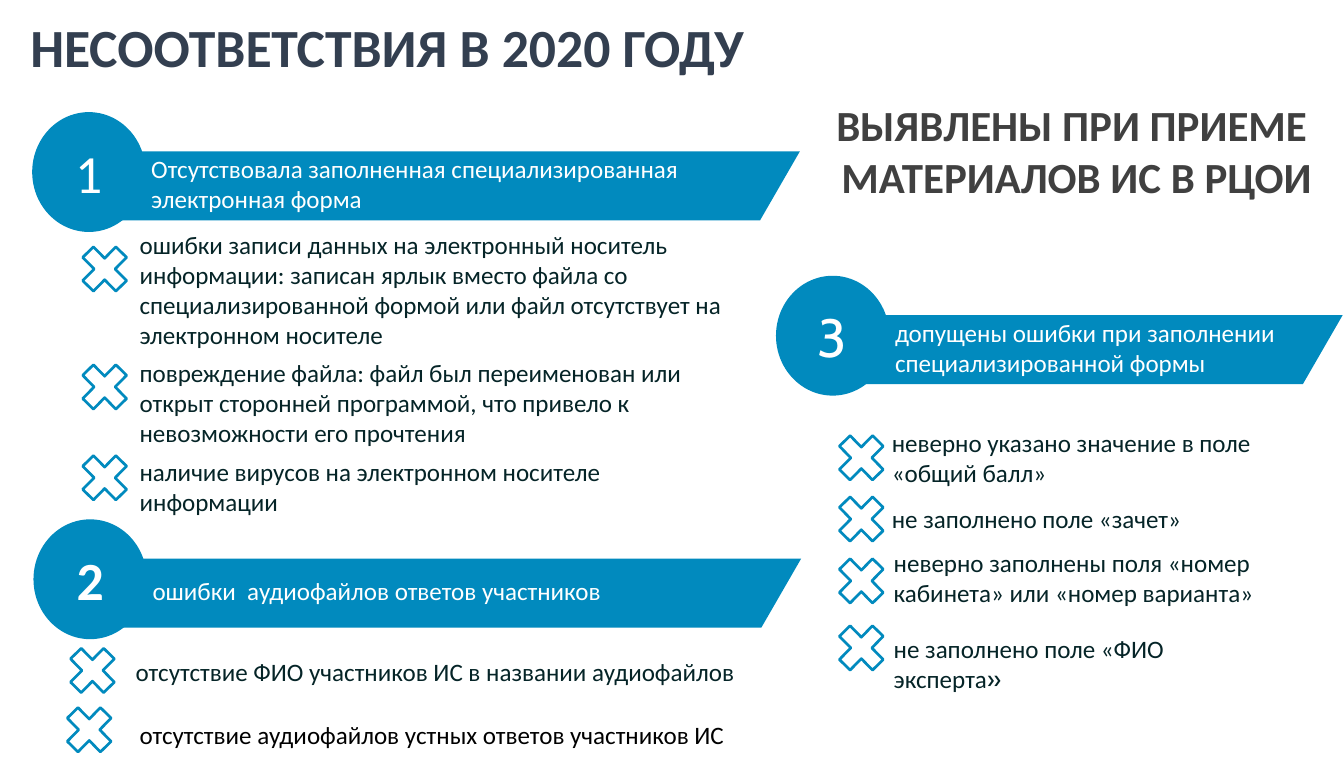
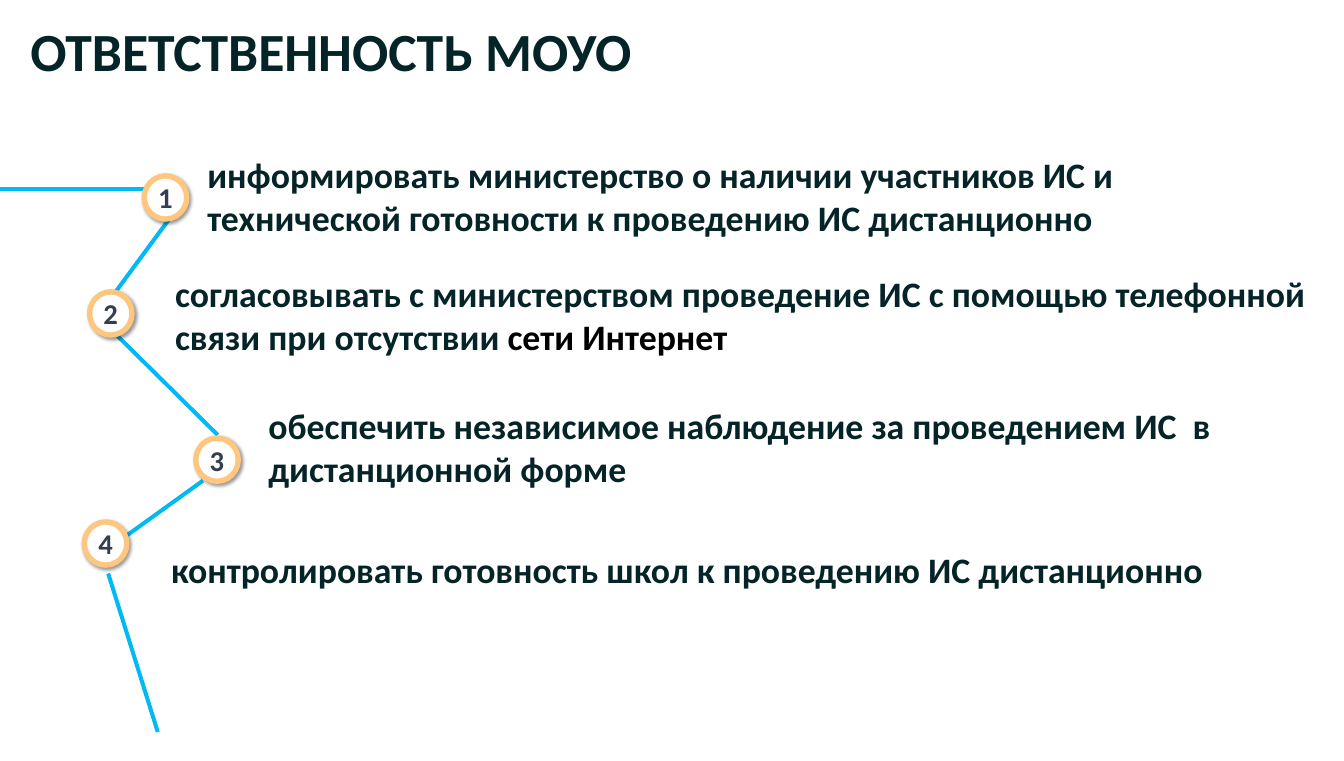
from dataclasses import dataclass

from lxml import etree
from pptx import Presentation
from pptx.dml.color import RGBColor
from pptx.enum.shapes import MSO_CONNECTOR, MSO_SHAPE
from pptx.enum.text import MSO_ANCHOR, MSO_AUTO_SIZE, PP_ALIGN
from pptx.oxml import parse_xml
from pptx.oxml.ns import nsdecls, qn
from pptx.util import Inches, Pt

LEFT, CENTER = PP_ALIGN.LEFT, PP_ALIGN.CENTER
TOP, MIDDLE = MSO_ANCHOR.TOP, MSO_ANCHOR.MIDDLE
OVAL, BAND, CROSS = MSO_SHAPE.OVAL, MSO_SHAPE.PARALLELOGRAM, MSO_SHAPE.MATH_MULTIPLY
STRAIGHT = MSO_CONNECTOR.STRAIGHT

COLORS = {
    "blue": "018ABE",
    "sky": "02B9F3",
    "peach": "FFC67F",
    "navy": "333F50",
    "gray": "404040",
    "ink": "052427",
    "black": "000000",
    "white": "FFFFFF",
}
FONT = "Calibri"
ALT_FONT = "Cabin"
TITLE_LEFT, TITLE_WIDTH, TITLE_HEIGHT = 0.37, 18.25, 1.11
DISC_W, DISC_H, BAND_H = 1.76, 1.86, 1.07
CROSS_W, CROSS_H = 0.99, 1.01
BADGE_W, BADGE_H = 0.66, 0.67


@dataclass
class Header:
    number: str
    left: float
    top: float
    band_width: float
    text: str
    bold: bool = False
    font: str = FONT


@dataclass
class Reason:
    cross_left: float
    cross_top: float
    left: float
    top: float
    width: float
    height: float
    text: str
    color: str = "ink"
    tail: str = ""


@dataclass
class Duty:
    number: str
    badge_left: float
    badge_top: float
    left: float
    top: float
    width: float
    height: float
    text: str
    tail: str = ""


HEADERS = [
    Header("1", 0.5, 1.74, 11.52,
           "Отсутствовала заполненная специализированная\nэлектронная форма"),
    Header("2", 0.52, 8.06, 11.52, "ошибки  аудиофайлов ответов участников", bold=True),
    Header("3", 12.05, 4.28, 8.4,
           "допущены ошибки при заполнении\nспециализированной формы", font=ALT_FONT),
]

REASONS = [
    Reason(1.13, 3.67, 2.07, 3.51, 9.99, 1.98,
           "ошибки записи данных на электронный носитель информации: записан ярлык "
           "вместо файла со специализированной формой или файл отсутствует на "
           "электронном носителе"),
    Reason(1.13, 5.5, 2.07, 5.49, 9.77, 1.51,
           "повреждение файла: файл был переименован или открыт сторонней программой, "
           "что привело к невозможности его прочтения"),
    Reason(1.13, 6.91, 2.07, 7.03, 8, 1.04,
           "наличие вирусов на электронном носителе\nинформации"),
    Reason(0.94, 9.9, 2.01, 10.14, 10, 0.57,
           "отсутствие ФИО участников ИС в названии аудиофайлов"),
    Reason(0.89, 10.82, 2.07, 11.11, 10, 0.57,
           "отсутствие аудиофайлов устных ответов участников ИС", color="black"),
    Reason(12.88, 6.6, 13.75, 6.58, 7.05, 1.04,
           "неверно указано значение в поле «общий балл»"),
    Reason(12.88, 7.55, 13.75, 7.76, 6, 0.57, "не заполнено поле «зачет»"),
    Reason(12.88, 8.51, 13.78, 8.44, 7.04, 1.04,
           "неверно заполнены поля «номер кабинета» или «номер варианта»"),
    Reason(12.88, 9.55, 13.78, 9.78, 5, 1.04, "не заполнено поле «ФИО эксперта", tail="»"),
]

DUTIES = [
    Duty("1", 2.24, 2.73, 3.12, 2.32, 15.31, 1.45,
         "информировать министерство о наличии участников ИС и технической "
         "готовности к проведению ИС дистанционно"),
    Duty("2", 1.39, 4.53, 2.62, 4.17, 17.89, 1.45,
         "согласовывать с министерством проведение ИС с помощью телефонной связи "
         "при отсутствии ", tail="сети Интернет"),
    Duty("3", 3.04, 6.8, 4.07, 6.22, 16.8, 1.45,
         "обеспечить независимое наблюдение за проведением ИС  в дистанционной форме"),
    Duty("4", 1.31, 8.1, 2.56, 8.45, 17.9, 0.77,
         "контролировать готовность школ к проведению ИС дистанционно"),
]

# Route between the numbered badges: x1, y1, x2, y2
ROUTE = [
    (0, 2.94, 2.45, 2.94),
    (2.76, 3.22, 1.75, 4.59),
    (1.75, 5.14, 3.38, 6.75),
    (3.15, 7.46, 1.76, 8.46),
    (1.68, 8.9, 2.45, 11.36),
]


def rgb(name: str) -> RGBColor:
    return RGBColor.from_string(COLORS[name])


def write(sp, text: str, *, size: float, color: str, bold: bool = False,
          font: str = FONT, align=LEFT, anchor=TOP, tail: str = "",
          tail_font: str = FONT, tail_color: str = "ink") -> None:
    """Fill a shape with one paragraph per line; tail is a last run with its own look."""
    tf = sp.text_frame
    tf.word_wrap = True
    tf.auto_size = MSO_AUTO_SIZE.NONE
    tf.vertical_anchor = anchor
    for i, line in enumerate(text.split("\n")):
        p = tf.paragraphs[0] if i == 0 else tf.add_paragraph()
        p.alignment = align
        runs = [(line, font, color)]
        if tail:
            runs.append((tail, tail_font, tail_color))
        for content, face, tone in runs:
            r = p.add_run()
            r.text = content
            r.font.name = face
            r.font.size = Pt(size)
            r.font.bold = bold
            r.font.color.rgb = rgb(tone)


def add_text(s, left: float, top: float, width: float, height: float,
             text: str, **fmt) -> None:
    sp = s.shapes.add_textbox(Inches(left), Inches(top), Inches(width), Inches(height))
    write(sp, text, **fmt)


def add_shape(s, kind, left: float, top: float, width: float, height: float, *,
              fill: str = "", line: str = "", weight: float = 0):
    sp = s.shapes.add_shape(kind, Inches(left), Inches(top), Inches(width), Inches(height))
    sp.shadow.inherit = False
    if fill:
        sp.fill.solid()
        sp.fill.fore_color.rgb = rgb(fill)
    else:
        sp.fill.background()
    if line:
        sp.line.color.rgb = rgb(line)
        sp.line.width = Pt(weight)
    else:
        sp.line.fill.background()
    return sp


def add_title_slide(prs, text: str, top: float, color: str):
    """Add a title-only slide with the shared title style."""
    s = prs.slides.add_slide(prs.slide_layouts[5])
    sp = s.shapes.title
    sp.left, sp.top = Inches(TITLE_LEFT), Inches(top)
    sp.width, sp.height = Inches(TITLE_WIDTH), Inches(TITLE_HEIGHT)
    write(sp, text, size=60, color=color, bold=True)
    return s


def add_header(s, h: Header) -> None:
    band_top = h.top + 0.61
    band = add_shape(s, BAND, h.left + 0.4, band_top, h.band_width, BAND_H, fill="blue")
    band.adjustments[0] = 0.577
    disc = add_shape(s, OVAL, h.left, h.top, DISC_W, DISC_H, fill="blue")
    write(disc, h.number, size=60, color="white", bold=h.bold, font=h.font,
          align=CENTER, anchor=MIDDLE)
    add_text(s, h.left + 1.75, band_top, h.band_width - 1.4, 1, h.text,
             size=28, color="white", anchor=MIDDLE)


def add_reason(s, item: Reason) -> None:
    add_shape(s, CROSS, item.cross_left, item.cross_top, CROSS_W, CROSS_H,
              line="blue", weight=3)
    add_text(s, item.left, item.top, item.width, item.height, item.text,
             size=28, color=item.color, tail=item.tail, tail_font=ALT_FONT)


def add_route_line(s, x1: float, y1: float, x2: float, y2: float) -> None:
    c = s.shapes.add_connector(STRAIGHT, Inches(x1), Inches(y1), Inches(x2), Inches(y2))
    c.line.color.rgb = rgb("sky")
    c.line.width = Pt(4.5)
    etree.SubElement(c._element.spPr, qn("a:effectLst"))


def add_drop_shadow(sp) -> None:
    effects = sp._element.spPr.find(qn("a:effectLst"))
    effects.append(parse_xml(
        f'<a:outerShdw {nsdecls("a")} blurRad="{Pt(4)}" dist="{Pt(3)}" dir="2700000" '
        f'algn="tl" rotWithShape="0"><a:srgbClr val="{COLORS["black"]}">'
        '<a:alpha val="40000"/></a:srgbClr></a:outerShdw>'))


def add_duty(s, d: Duty) -> None:
    badge = add_shape(s, OVAL, d.badge_left, d.badge_top, BADGE_W, BADGE_H,
                      fill="white", line="peach", weight=6)
    add_drop_shadow(badge)
    tf = badge.text_frame
    tf.margin_left = tf.margin_right = tf.margin_top = tf.margin_bottom = 0
    write(badge, d.number, size=32, color="navy", bold=True, align=CENTER, anchor=MIDDLE)
    add_text(s, d.left, d.top, d.width, d.height, d.text, size=40, color="ink",
             bold=True, tail=d.tail, tail_color="black")


def build_mismatches(prs) -> None:
    s = add_title_slide(prs, "НЕСООТВЕТСТВИЯ В 2020 ГОДУ", 0.16, "navy")
    add_text(s, 12.62, 1.48, 8.2, 1.72, "ВЫЯВЛЕНЫ ПРИ ПРИЕМЕ \nМАТЕРИАЛОВ ИС В РЦОИ",
             size=48, color="gray", bold=True, align=CENTER)
    for h in HEADERS:
        add_header(s, h)
    for item in REASONS:
        add_reason(s, item)


def build_duties(prs) -> None:
    s = add_title_slide(prs, "ОТВЕТСТВЕННОСТЬ МОУО", 0.22, "ink")
    for ends in ROUTE:
        add_route_line(s, *ends)
    for d in DUTIES:
        add_duty(s, d)


def main() -> None:
    prs = Presentation()
    prs.slide_width, prs.slide_height = Inches(20.87), Inches(11.81)
    build_mismatches(prs)
    build_duties(prs)
    prs.save("out.pptx")


if __name__ == "__main__":
    main()
